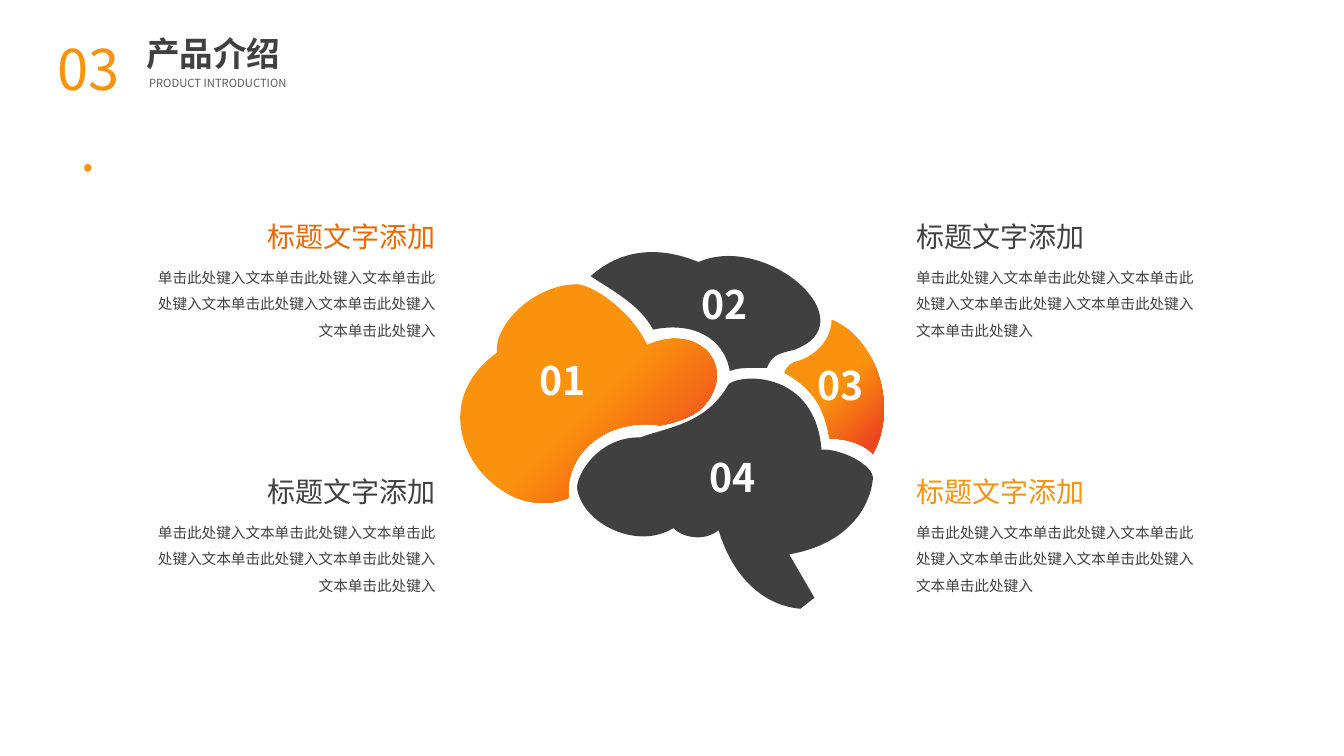
from dataclasses import dataclass

import lxml.etree
import pptx
import pptx.dml.color
import pptx.enum.text
import pptx.oxml.ns
import pptx.presentation
import pptx.shapes.autoshape
import pptx.slide
import pptx.util

PX = 9144  # EMU per px, 100 px to the inch
FONT = "Noto Sans CJK SC"

ORANGE = pptx.dml.color.RGBColor(0xFA, 0x92, 0x0D)
RED = pptx.dml.color.RGBColor(0xEE, 0x47, 0x1E)
DEEP_ORANGE = pptx.dml.color.RGBColor(0xEC, 0x67, 0x00)
CHARCOAL = pptx.dml.color.RGBColor(0x40, 0x40, 0x40)
GREY = pptx.dml.color.RGBColor(0x59, 0x59, 0x59)
WHITE = pptx.dml.color.RGBColor(0xFF, 0xFF, 0xFF)

ALIGN = pptx.enum.text.PP_ALIGN
Point = tuple[int, int]
qn = pptx.oxml.ns.qn


@dataclass(frozen=True)
class Label:
    text: str
    left: int
    top: int
    width: int
    height: int
    size: float
    color: pptx.dml.color.RGBColor
    align: ALIGN = ALIGN.LEFT
    bold: bool = False
    line_spacing: float = 1.0


@dataclass(frozen=True)
class Lobe:
    """A brain part; a segment holds one point (line) or three (cubic curve)."""

    number: str
    number_left: int
    number_top: int
    glowing: bool
    frame: tuple[int, int, int, int]
    start: Point
    segments: list[list[Point]]


@dataclass(frozen=True)
class Callout:
    left: int
    top: int
    title_color: pptx.dml.color.RGBColor
    align: ALIGN


HEADER = [
    Label("产品介绍", 135, 28, 209, 50, 24, CHARCOAL, bold=True),
    Label("PRODUCT INTRODUCTION", 138, 71, 202, 24, 8, GREY, ALIGN.JUSTIFY),
    Label("03.", 45, 16, 86, 85, 40, ORANGE, ALIGN.CENTER, line_spacing=1.2),
]

LOBES = [
    Lobe("01", 519, 349, True, (457, 282, 254, 217), (642, 342), [
        [(627, 310), (591, 284), (573, 282)],
        [(530, 282), (490, 322), (493, 350)],
        [(407, 412), (491, 524), (564, 494)],
        [(560, 447), (606, 414), (655, 422)],
        [(671, 419), (687, 414), (697, 404)],
        [(732, 367), (697, 319), (642, 342)],
    ]),
    Lobe("02", 680, 273, False, (586, 250, 228, 118), (586, 274), [
        [(618, 245), (657, 245), (693, 260)],
        [(761, 230), (862, 320), (788, 347)],
        [(778, 350), (766, 350), (761, 365)],
        [(748, 365), (735, 364), (724, 368)],
        [(718, 334), (686, 319), (648, 327)],
        [(635, 303), (612, 291), (586, 274)],
    ]),
    Lobe("04", 688, 445, False, (572, 376, 294, 229), (808, 593), [
        [(794, 604)],
        [(753, 600), (725, 567), (713, 526)],
        [(698, 538), (677, 533), (668, 524)],
        [(632, 546), (580, 520), (573, 487)],
        [(569, 475), (592, 433), (635, 434)],
        [(666, 423), (701, 420), (723, 381)],
        [(737, 370), (809, 369), (815, 446)],
        [(834, 445), (867, 461), (866, 475)],
        [(864, 498), (846, 539), (783, 550)],
        [(808, 593)],
    ]),
    Lobe("03", 795, 354, True, (778, 317, 99, 133), (825, 317), [
        [(825, 339), (806, 354), (792, 358)],
        [(786, 359), (780, 363), (778, 370)],
        [(808, 386), (819, 409), (823, 435)],
        [(838, 435), (855, 439), (866, 450)],
        [(891, 405), (871, 336), (825, 317)],
    ]),
]

CALLOUT_TITLE = "标题文字添加"
CALLOUT_BODY = "单击此处键入文本" * 5 + "单击此处键入"
CALLOUT_WIDTH, TITLE_WIDTH, BODY_OFFSET = 298, 213, 40
LEFT_COLUMN, RIGHT_COLUMN = 144, 899
UPPER_ROW, LOWER_ROW = 213, 466
CALLOUTS = [
    Callout(LEFT_COLUMN, UPPER_ROW, DEEP_ORANGE, ALIGN.RIGHT),
    Callout(LEFT_COLUMN, LOWER_ROW, CHARCOAL, ALIGN.RIGHT),
    Callout(RIGHT_COLUMN, UPPER_ROW, CHARCOAL, ALIGN.LEFT),
    Callout(RIGHT_COLUMN, LOWER_ROW, ORANGE, ALIGN.LEFT),
]


def add_label(slide: pptx.slide.Slide, label: Label) -> None:
    box = slide.shapes.add_textbox(
        *(side * PX for side in (label.left, label.top, label.width, label.height))
    )
    frame = box.text_frame
    frame.word_wrap = True
    frame.auto_size = pptx.enum.text.MSO_AUTO_SIZE.SHAPE_TO_FIT_TEXT
    paragraph = frame.paragraphs[0]
    paragraph.text = label.text
    paragraph.alignment = label.align
    paragraph.line_spacing = label.line_spacing
    font = paragraph.font
    font.name = FONT
    font.size = pptx.util.Pt(label.size)
    font.bold = label.bold
    font.color.rgb = label.color
    defaults = paragraph._p.pPr.find(qn("a:defRPr"))
    lxml.etree.SubElement(defaults, qn("a:ea"), typeface=FONT)


def bend_outline(shape: pptx.shapes.autoshape.Shape, lobe: Lobe) -> None:
    """Turn each run of three line points into a curve and fit the frame."""
    left, top, width, height = (side * PX for side in lobe.frame)
    outline = next(shape._element.iter(qn("a:path")))
    for point in outline.iter(qn("a:pt")):
        point.set("x", str(int(point.get("x")) + shape.left - left))
        point.set("y", str(int(point.get("y")) + shape.top - top))
    outline.set("w", str(width))
    outline.set("h", str(height))
    shape.left, shape.top, shape.width, shape.height = left, top, width, height

    lines = iter(outline.findall(qn("a:lnTo")))
    for segment in lobe.segments:
        parts = [next(lines) for _ in segment]
        if len(parts) == 1:
            continue
        curve = lxml.etree.Element(qn("a:cubicBezTo"))
        parts[0].addprevious(curve)
        for part in parts:
            curve.append(part[0])
            outline.remove(part)


def fill_lobe(shape: pptx.shapes.autoshape.Shape, glowing: bool) -> None:
    if not glowing:
        shape.fill.solid()
        shape.fill.fore_color.rgb = CHARCOAL
        return
    shape.fill.gradient()
    shape.fill.gradient_angle = 315
    stops = ((0.52, ORANGE), (0.9, RED))
    for stop, (position, color) in zip(shape.fill.gradient_stops, stops):
        stop.position = position
        stop.color.rgb = color


def add_lobe(slide: pptx.slide.Slide, lobe: Lobe) -> None:
    builder = slide.shapes.build_freeform(*(side * PX for side in lobe.start))
    points = [(x * PX, y * PX) for segment in lobe.segments for x, y in segment]
    builder.add_line_segments(points, close=True)
    shape = builder.convert_to_shape()
    bend_outline(shape, lobe)
    shape.shadow.inherit = False
    shape.line.fill.background()
    fill_lobe(shape, lobe.glowing)


def add_callout(slide: pptx.slide.Slide, callout: Callout) -> None:
    title_left = callout.left
    if callout.align == ALIGN.RIGHT:
        title_left += CALLOUT_WIDTH - TITLE_WIDTH
    add_label(slide, Label(CALLOUT_BODY, callout.left, callout.top + BODY_OFFSET,
                           CALLOUT_WIDTH, 87, 10.5, CHARCOAL, callout.align,
                           line_spacing=1.5))
    add_label(slide, Label(CALLOUT_TITLE, title_left, callout.top, TITLE_WIDTH, 44,
                           20, callout.title_color, callout.align))


def build_deck() -> pptx.presentation.Presentation:
    deck = pptx.Presentation()
    deck.slide_height = 750 * PX
    deck.slide_width = deck.slide_height * 16 // 9
    slide = deck.slides.add_slide(deck.slide_layouts[6])
    for label in HEADER:
        add_label(slide, label)
    for lobe in LOBES:
        add_lobe(slide, lobe)
    for lobe in LOBES:
        add_label(slide, Label(lobe.number, lobe.number_left, lobe.number_top,
                               78, 57, 28, WHITE, ALIGN.CENTER, bold=True))
    for callout in CALLOUTS:
        add_callout(slide, callout)
    return deck


if __name__ == "__main__":
    build_deck().save("out.pptx")
